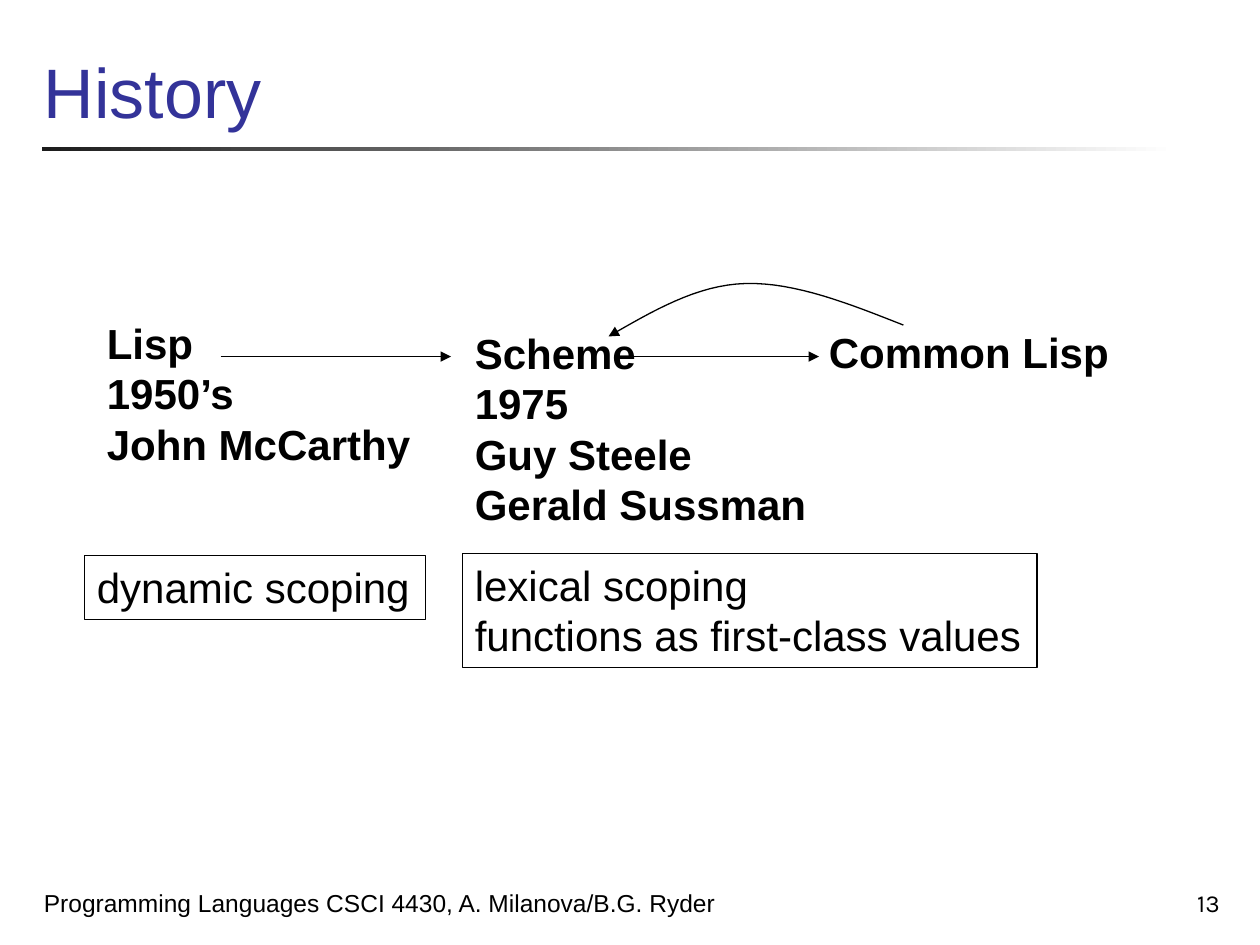
from dataclasses import dataclass

from lxml import etree
from pptx import Presentation
from pptx.dml.color import RGBColor
from pptx.enum.shapes import MSO_CONNECTOR, MSO_SHAPE
from pptx.enum.text import MSO_ANCHOR as Anchor, MSO_AUTO_SIZE as AutoSize, PP_ALIGN as Align
from pptx.oxml.ns import qn
from pptx.util import Inches, Pt

BLACK = "000000"
CURVE_STEPS = 16


@dataclass
class Label:
    text: str
    left: float
    top: float
    width: float
    height: float
    size: float = 24
    font: str = "Arial"
    color: str = BLACK
    bold: bool = False
    boxed: bool = False
    frame: bool = False  # fixed, wrapping, bottom-anchored text
    align: Align = Align.LEFT


@dataclass
class Arrow:
    x1: float
    x2: float
    y: float


LABELS = [
    # Footer, page number and title
    Label("Programming Languages CSCI 4430, A. Milanova/B.G. Ryder",
          0.25, 6.83, 5.58, 0.5, size=14, frame=True),
    Label("13", 7.7, 6.83, 2.08, 0.5, size=14, font="Karla", frame=True, align=Align.RIGHT),
    Label("History", 0.25, 0, 9.52, 1.1, size=40, color="333399", frame=True),
    # Languages
    Label("Lisp\n1950’s\nJohn McCarthy", 0.75, 2.47, 2.64, 1.31, bold=True),
    Label("Scheme\n1975\nGuy Steele\nGerald Sussman", 3.67, 2.55, 2.86, 1.72, bold=True),
    Label("Common Lisp", 6.48, 2.54, 2.46, 0.5, bold=True),
    # Features
    Label("dynamic scoping", 0.67, 4.41, 2.71, 0.51, boxed=True),
    Label("lexical scoping\nfunctions as first-class values",
          3.67, 4.39, 4.56, 0.91, boxed=True),
]
ARROWS = [Arrow(1.75, 3.58, 2.83), Arrow(5, 6.5, 2.83)]
# Bézier segments of the arc from Common Lisp back to Scheme
ARC = [
    ((7.17, 2.58), (6.74, 2.41), (6.31, 2.24), (5.92, 2.25)),
    ((5.92, 2.25), (5.53, 2.26), (5.18, 2.47), (4.83, 2.67)),
]


def rgb(value: str) -> RGBColor:
    return RGBColor.from_string(value)


def outline(shape) -> None:
    shape.line.color.rgb = rgb(BLACK)
    shape.line.width = Pt(0.75)


def add_arrowhead(shape) -> None:
    etree.SubElement(shape.line._get_or_add_ln(), qn("a:tailEnd"), type="triangle")


def add_label(s, label: Label) -> None:
    sp = s.shapes.add_textbox(Inches(label.left), Inches(label.top),
                              Inches(label.width), Inches(label.height))
    tf = sp.text_frame
    tf.text = label.text
    tf.word_wrap = label.frame
    tf.auto_size = AutoSize.NONE if label.frame else AutoSize.SHAPE_TO_FIT_TEXT
    tf.vertical_anchor = Anchor.BOTTOM if label.frame else Anchor.TOP
    if label.boxed:
        outline(sp)
    for p in tf.paragraphs:
        p.alignment = label.align
        for r in p.runs:
            r.font.name = label.font
            r.font.size = Pt(label.size)
            r.font.bold = label.bold
            r.font.color.rgb = rgb(label.color)


def add_arrow(s, arrow: Arrow) -> None:
    line = s.shapes.add_connector(MSO_CONNECTOR.STRAIGHT, Inches(arrow.x1), Inches(arrow.y),
                                  Inches(arrow.x2), Inches(arrow.y))
    outline(line)
    add_arrowhead(line)
    etree.SubElement(line._element.spPr, qn("a:effectLst"))


def bezier_point(segment, t: float) -> tuple[int, int]:
    u = 1 - t
    weights = (u**3, 3 * u * u * t, 3 * u * t * t, t**3)
    x, y = (sum(w * c for w, c in zip(weights, axis)) for axis in zip(*segment))
    return Inches(x), Inches(y)


def add_arc(s) -> None:
    points = [bezier_point(segment, i / CURVE_STEPS)
              for segment in ARC for i in range(1, CURVE_STEPS + 1)]
    builder = s.shapes.build_freeform(*bezier_point(ARC[0], 0))
    builder.add_line_segments(points, close=False)
    arc = builder.convert_to_shape()
    arc.shadow.inherit = False
    arc.fill.background()
    outline(arc)
    add_arrowhead(arc)


def add_rule(s) -> None:
    rule = s.shapes.add_shape(MSO_SHAPE.RECTANGLE, Inches(0.33), Inches(1.17),
                              Inches(9), Inches(0.03))
    rule.shadow.inherit = False
    rule.line.fill.background()
    rule.fill.gradient()
    rule.fill.gradient_angle = 0
    for stop, color in zip(rule.fill.gradient_stops, ("1C1C1C", "FFFFFF")):
        stop.color.rgb = rgb(color)


def main() -> None:
    prs = Presentation()
    prs.slide_width, prs.slide_height = Inches(10), Inches(7.5)
    s = prs.slides.add_slide(prs.slide_layouts[6])
    add_rule(s)
    for label in LABELS:
        add_label(s, label)
    for arrow in ARROWS:
        add_arrow(s, arrow)
    add_arc(s)
    prs.save("out.pptx")


if __name__ == "__main__":
    main()
